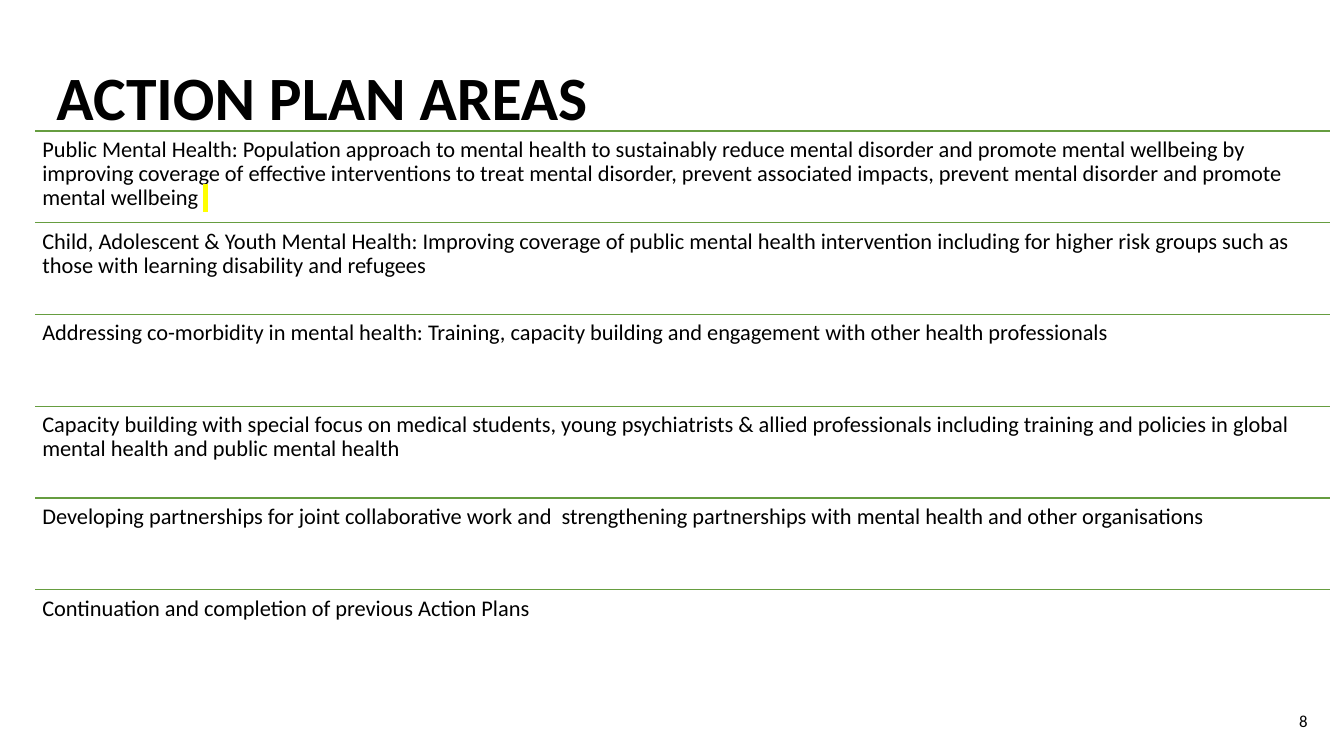
from dataclasses import dataclass

from lxml import etree
from pptx import Presentation
from pptx import util as u
from pptx.dml.color import RGBColor
from pptx.enum import shapes, text
from pptx.oxml.ns import qn


@dataclass
class Theme:
    font: str = "Calibri"
    ink: str = "000000"
    rule: str = "669D40"
    mark: str = "FFFF00"
    head: int = 44
    body: int = 16
    foot: int = 12


def write(frame, words, theme, size, bold=False, align=text.PP_ALIGN.LEFT,
          anchor=text.MSO_ANCHOR.TOP, space=None, after=0, pad=(0.1, 0.05), mark=""):
    frame.word_wrap = True
    frame.auto_size = text.MSO_AUTO_SIZE.NONE
    frame.vertical_anchor = anchor
    frame.margin_left = frame.margin_right = u.Inches(pad[0])
    frame.margin_top = frame.margin_bottom = u.Inches(pad[1])
    para = frame.paragraphs[0]
    para.alignment = align
    para.line_spacing = space
    para.space_before = u.Pt(0)
    para.space_after = u.Pt(after)
    for part in filter(None, (words, mark)):
        run = para.add_run()
        run.text = part
        font = run.font
        font.size, font.bold = u.Pt(size), bold
        font.color.rgb = RGBColor.from_string(theme.ink)
        if part == mark:
            glow = etree.SubElement(font._element, qn("a:highlight"))
            etree.SubElement(glow, qn("a:srgbClr"), val=theme.mark)
        font.name = theme.font


class Page:
    def __init__(self, deck, theme):
        self.theme = theme
        self.slide = deck.slides.add_slide(deck.slide_layouts[5])

    def title(self, words, left, top, width, height):
        shape = self.slide.shapes.title
        shape.left, shape.top = u.Inches(left), u.Inches(top)
        shape.width, shape.height = u.Inches(width), u.Inches(height)
        write(shape.text_frame, words, self.theme, self.theme.head, bold=True,
              anchor=text.MSO_ANCHOR.MIDDLE, space=0.9)

    def label(self, words, left, top, width, height, size, **form):
        box = self.slide.shapes.add_textbox(
            u.Inches(left), u.Inches(top), u.Inches(width), u.Inches(height))
        write(box.text_frame, words, self.theme, size, **form)

    def rule(self, left, top, width):
        line = self.slide.shapes.add_connector(
            shapes.MSO_CONNECTOR.STRAIGHT, u.Inches(left), u.Inches(top),
            u.Inches(left + width), u.Inches(top))
        line.line.color.rgb = RGBColor.from_string(self.theme.rule)
        line.line.width = u.Pt(1)
        etree.SubElement(line._element.spPr, qn("a:effectLst"))

    def row(self, words, left, top, width, height, mark=""):
        self.rule(left, top, width)
        self.label(words, left, top, width, height, self.theme.body,
                   space=0.9, after=5.6, pad=(0.07, 0.07), mark=mark)


AREAS = [
    ("Public Mental Health: Population approach to mental health to sustainably "
     "reduce mental disorder and promote mental wellbeing by improving coverage of "
     "effective interventions to treat mental disorder, prevent associated impacts, "
     "prevent mental disorder and promote mental wellbeing ", " "),
    ("Child, Adolescent & Youth Mental Health: Improving coverage of public mental "
     "health intervention including for higher risk groups such as those with "
     "learning disability and refugees", ""),
    ("Addressing co-morbidity in mental health: Training, capacity building and "
     "engagement with other health professionals", ""),
    ("Capacity building with special focus on medical students, young psychiatrists "
     "& allied professionals including training and policies in global mental health "
     "and public mental health", ""),
    ("Developing partnerships for joint collaborative work and  strengthening "
     "partnerships with mental health and other organisations", ""),
    ("Continuation and completion of previous Action Plans", ""),
]


def main():
    deck = Presentation()
    deck.slide_width, deck.slide_height = u.Inches(13.33), u.Inches(7.5)
    theme = Theme()
    page = Page(deck, theme)
    page.title("ACTION PLAN AREAS", 0.46, 0.53, 12.53, 0.94)
    step = 0.91
    for i, (words, mark) in enumerate(AREAS):
        page.row(words, 0.35, 1.3 + i * step, 12.84, step, mark)
    page.label("8", 12.54, 6.95, 0.56, 0.4, theme.foot, align=text.PP_ALIGN.RIGHT,
               anchor=text.MSO_ANCHOR.MIDDLE, pad=(0.13, 0.07))
    deck.save("out.pptx")


if __name__ == "__main__":
    main()
